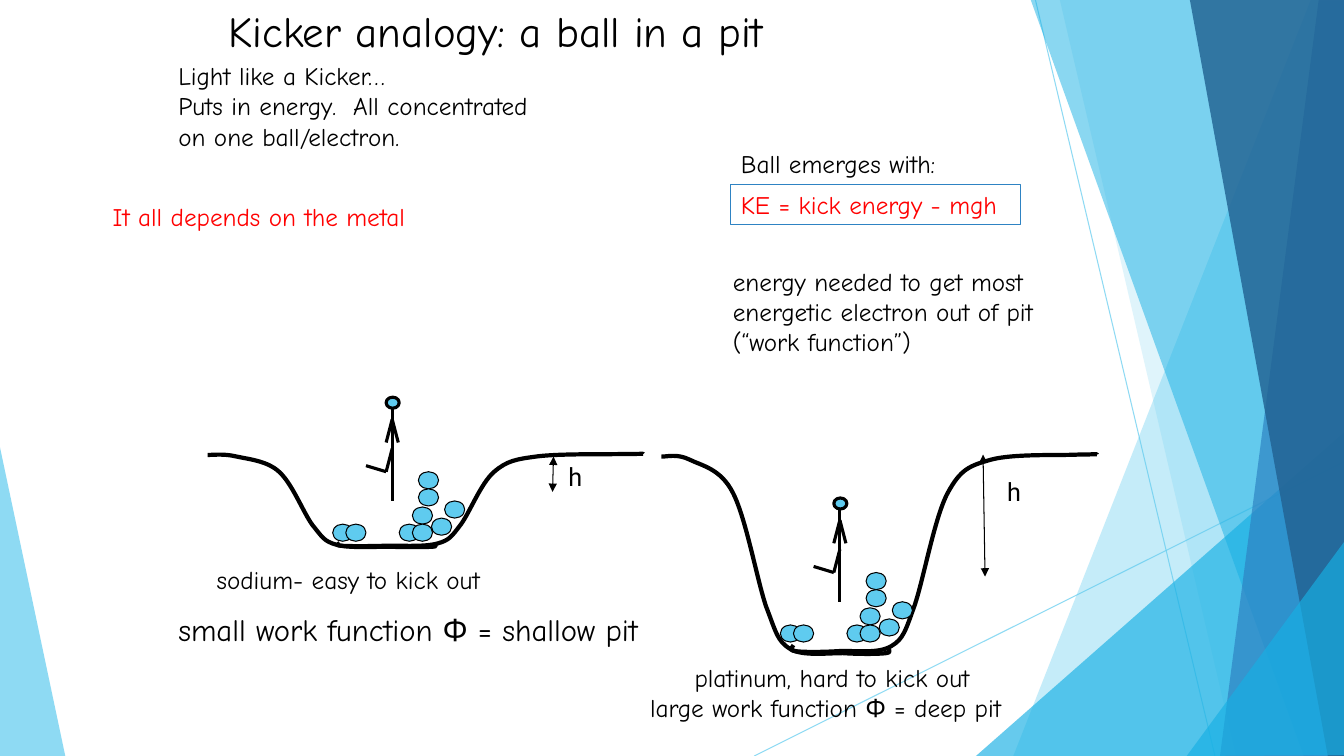
from dataclasses import dataclass
from typing import Any

import pptx
import pptx.dml.color
import pptx.enum.shapes
import pptx.enum.text
import pptx.oxml
import pptx.oxml.ns
import pptx.util
from lxml import etree

Inches = pptx.util.Inches
Point = tuple[float, float]
COLOURS = {"sky": "5FCBEF", "cyan": "17B0E4", "blue": "2E83C3",
           "navy": "226292", "black": "000000", "red": "FF0000"}


@dataclass
class Facet:
    points: list[Point]
    colour: str
    opacity: int


@dataclass
class Label:
    left: float
    top: float
    width: float
    height: float
    lines: list[str]
    colour: str = "black"
    size: float = 18
    font: str = "Comic Neue"
    wrap: bool = False
    boxed: bool = False
    first_indent: float = 0


@dataclass
class Pit:
    wall_shift: float      # moves the walls sideways
    depth: float           # stretches the walls below the rim
    kicker_left: float     # origin of kicker and balls
    kicker_top: float
    height_arrow: tuple[Point, Point]


# Background facets, back to front
LEFT_FACET = Facet([(-0.01, 4.39), (0.65, 7.51), (-0.01, 7.5)], "sky", 70)
RIGHT_FACETS = [
    Facet([(13, 0), (10.05, 7.5), (13.36, 7.51), (13.35, 0.01)], "sky", 36),
    Facet([(10.51, -0.01), (12.26, 7.5), (13.35, 7.5), (13.35, -0.01)], "sky", 20),
    Facet([(9.68, 7.5), (13.33, 4.29), (13.34, 7.5)], "cyan", 66),
    Facet([(10.22, -0.01), (12.93, 7.5), (13.35, 7.49), (13.35, -0.01)], "cyan", 50),
    Facet([(13.08, -0.01), (12.1, 7.5), (13.35, 7.5), (13.34, -0.01)], "blue", 70),
    Facet([(11.8, -0.01), (13.17, 7.5), (13.36, 7.5), (13.34, -0.01)], "navy", 82),
    Facet([(11.77, 7.5), (13.35, 5.35), (13.36, 7.49)], "cyan", 66),
]
BACKGROUND_LINES = [((7.48, 7.5), (13.35, 4.57)), ((10.27, 0), (12.05, 7.5))]

# Walls as Bezier points: a start, then three points for each curve
RIM = 4.5
RIGHT_WALL = [
    (7.87, 6.4), (7.87, 6.41), (7.81, 6.45), (7.89, 6.46), (7.96, 6.47), (8.15, 6.47),
    (8.31, 6.46), (8.47, 6.45), (8.71, 6.49), (8.84, 6.41), (8.96, 6.34), (8.98, 6.26),
    (9.07, 6.01), (9.16, 5.75), (9.27, 5.13), (9.4, 4.89), (9.53, 4.65), (9.62, 4.62),
    (9.83, 4.56), (10.05, 4.5), (10.51, 4.52), (10.69, 4.51), (10.86, 4.51), (10.89, 4.5),
    (10.88, 4.51)]
LEFT_WALL = [
    (8.8, 6.42), (8.8, 6.43), (8.86, 6.47), (8.79, 6.48), (8.71, 6.49), (8.52, 6.49),
    (8.36, 6.48), (8.2, 6.48), (7.96, 6.51), (7.84, 6.44), (7.71, 6.36), (7.7, 6.28),
    (7.6, 6.02), (7.51, 5.76), (7.4, 5.14), (7.27, 4.89), (7.15, 4.65), (6.96, 4.62),
    (6.84, 4.56), (6.72, 4.5), (6.62, 4.53), (6.56, 4.53)]

# Kicker and balls, measured from the middle and top of the kicker's head
KICKER_LIMBS = [
    ((0, 0), (0, 1.03)),
    ((0, 0.22), (-0.06, 0.45)), ((0, 0.22), (0.06, 0.45)),
    ((0, 0.51), (-0.06, 0.74)), ((-0.26, 0.68), (-0.06, 0.74)),
]
BALLS = [(0.07, 1.26), (0.2, 1.09), (-0.59, 1.26), (-0.46, 1.26), (0.26, 0.74),
         (0.26, 0.91), (0.52, 1.03), (0.2, 1.26), (0.39, 1.2)]
PITS = [
    Pit(0, 1, 8.33, 4.94, ((9.77, 5.72), (9.75, 4.51))),
    Pit(-4.5, 0.467, 3.89, 3.94, ((5.48, 4.88), (5.49, 4.53))),
]

LABELS = [
    Label(1.67, 0.55, 4.03, 1.01, ["Light like a Kicker…",
          "Puts in energy.  All concentrated", "on one ball/electron."]),
    Label(7.25, 1.83, 2.87, 0.4, ["KE = kick energy - mgh"], "red", boxed=True),
    Label(7.25, 1.42, 2.35, 0.4, ["Ball emerges with:"]),
    Label(6.35, 6.52, 3.96, 0.71, ["platinum, hard to kick out",
          "large work function Φ = deep pit"], first_indent=0.44),
    Label(9.89, 4.68, 0.34, 0.4, ["h"], font="Roboto"),
    Label(2.05, 5.55, 4.15, 0.4, ["sodium- easy to kick out"], wrap=True),
    Label(5.54, 4.53, 0.34, 0.4, ["h"], font="Roboto"),
    Label(1.67, 6.01, 5.14, 0.47, ["small work function Φ = shallow pit"], size=22),
    Label(7.17, 2.59, 3.57, 1.01, ["energy needed to get most",
          "energetic electron out of pit", "(“work function”)"]),
    Label(2.17, 0, 9, 0.42, ["Kicker analogy: a ball in a pit"], size=30.6, wrap=True),
    Label(1.02, 1.95, 3.74, 0.4, ["It all depends on the metal"], "red", wrap=True),
]


def rgb(name: str) -> pptx.dml.color.RGBColor:
    return pptx.dml.color.RGBColor.from_string(COLOURS[name])


def add_child(parent: Any, tag: str, **attributes: str) -> Any:
    return etree.SubElement(parent, pptx.oxml.ns.qn(tag), **attributes)


def set_opacity(parent: Any, percent: int) -> None:
    for colour in parent.iter(pptx.oxml.ns.qn("a:srgbClr")):
        add_child(colour, "a:alpha", val=str(percent * 1000))


def set_line(shape: Any, colour: str, width: float) -> None:
    shape.line.color.rgb = rgb(colour)
    shape.line.width = pptx.util.Pt(width)


def draw_line(shapes: Any, start: Point, end: Point, colour: str, width: float) -> Any:
    connector = shapes.add_connector(pptx.enum.shapes.MSO_CONNECTOR.STRAIGHT,
                                     *(Inches(value) for value in start + end))
    set_line(connector, colour, width)
    add_child(connector._element.spPr, "a:effectLst")
    return connector


def draw_outline(shapes: Any, points: list[Point], close: bool) -> Any:
    corners = [(Inches(x), Inches(y)) for x, y in points]
    builder = shapes.build_freeform(*corners[0])
    builder.add_line_segments(corners[1:], close=close)
    shape = builder.convert_to_shape()
    shape.shadow.inherit = False
    return shape


def draw_facet(shapes: Any, facet: Facet) -> None:
    shape = draw_outline(shapes, facet.points, True)
    shape.fill.solid()
    shape.fill.fore_color.rgb = rgb(facet.colour)
    shape.line.fill.background()
    set_opacity(shape._element.spPr, facet.opacity)


def draw_wall(shapes: Any, points: list[Point]) -> None:
    shape = draw_outline(shapes, points, False)
    shape.fill.background()
    set_line(shape, "black", 3)
    # Join each three straight steps into one cubic curve
    steps = list(shape._element.iter(pptx.oxml.ns.qn("a:lnTo")))
    for first in range(0, len(steps), 3):
        curve = add_child(steps[first].getparent(), "a:cubicBezTo")
        for step in steps[first:first + 3]:
            curve.append(step[0])
            step.getparent().remove(step)


def draw_disc(shapes: Any, left: float, top: float, width: float, height: float,
              line_width: float) -> None:
    disc = shapes.add_shape(pptx.enum.shapes.MSO_SHAPE.OVAL, Inches(left), Inches(top),
                            Inches(width), Inches(height))
    disc.shadow.inherit = False
    disc.fill.solid()
    disc.fill.fore_color.rgb = rgb("sky")
    set_line(disc, "black", line_width)


def draw_pit(shapes: Any, pit: Pit) -> None:
    for wall in (RIGHT_WALL, LEFT_WALL):
        draw_wall(shapes, [(x + pit.wall_shift, RIM + (y - RIM) * pit.depth) for x, y in wall])
    left, top = pit.kicker_left, pit.kicker_top
    for (x1, y1), (x2, y2) in KICKER_LIMBS:
        draw_line(shapes, (left + x1, top + y1), (left + x2, top + y2), "black", 2.25)
    draw_disc(shapes, left - 0.06, top, 0.13, 0.11, 2.25)
    for x, y in BALLS:
        draw_disc(shapes, left + x, top + y, 0.2, 0.17, 0.75)
    arrow = draw_line(shapes, *pit.height_arrow, "black", 0.75)
    for end in ("a:headEnd", "a:tailEnd"):
        add_child(arrow.line._get_or_add_ln(), end, type="triangle")


def draw_label(shapes: Any, label: Label) -> None:
    box = shapes.add_textbox(Inches(label.left), Inches(label.top),
                             Inches(label.width), Inches(label.height))
    if label.boxed:
        set_line(box, "blue", 0.75)
    frame = box.text_frame
    frame.word_wrap = label.wrap
    for index, line in enumerate(label.lines):
        paragraph = frame.add_paragraph() if index else frame.paragraphs[0]
        if label.first_indent and index == 0:
            paragraph._p.get_or_add_pPr().set("marL", str(Inches(label.first_indent)))
        run = paragraph.add_run()
        run.text = line
        run.font.name = label.font
        run.font.size = pptx.util.Pt(label.size)
        run.font.color.rgb = rgb(label.colour)


def main() -> None:
    presentation = pptx.Presentation()
    presentation.slide_width, presentation.slide_height = Inches(13.33), Inches(7.5)
    shapes = presentation.slides.add_slide(presentation.slide_layouts[6]).shapes
    draw_facet(shapes, LEFT_FACET)
    for start, end in BACKGROUND_LINES:
        set_opacity(draw_line(shapes, start, end, "sky", 0.75)._element.spPr, 70)
    for facet in RIGHT_FACETS:
        draw_facet(shapes, facet)
    for pit in PITS:
        draw_pit(shapes, pit)
    for label in LABELS:
        draw_label(shapes, label)
    presentation.save("out.pptx")


if __name__ == "__main__":
    main()
